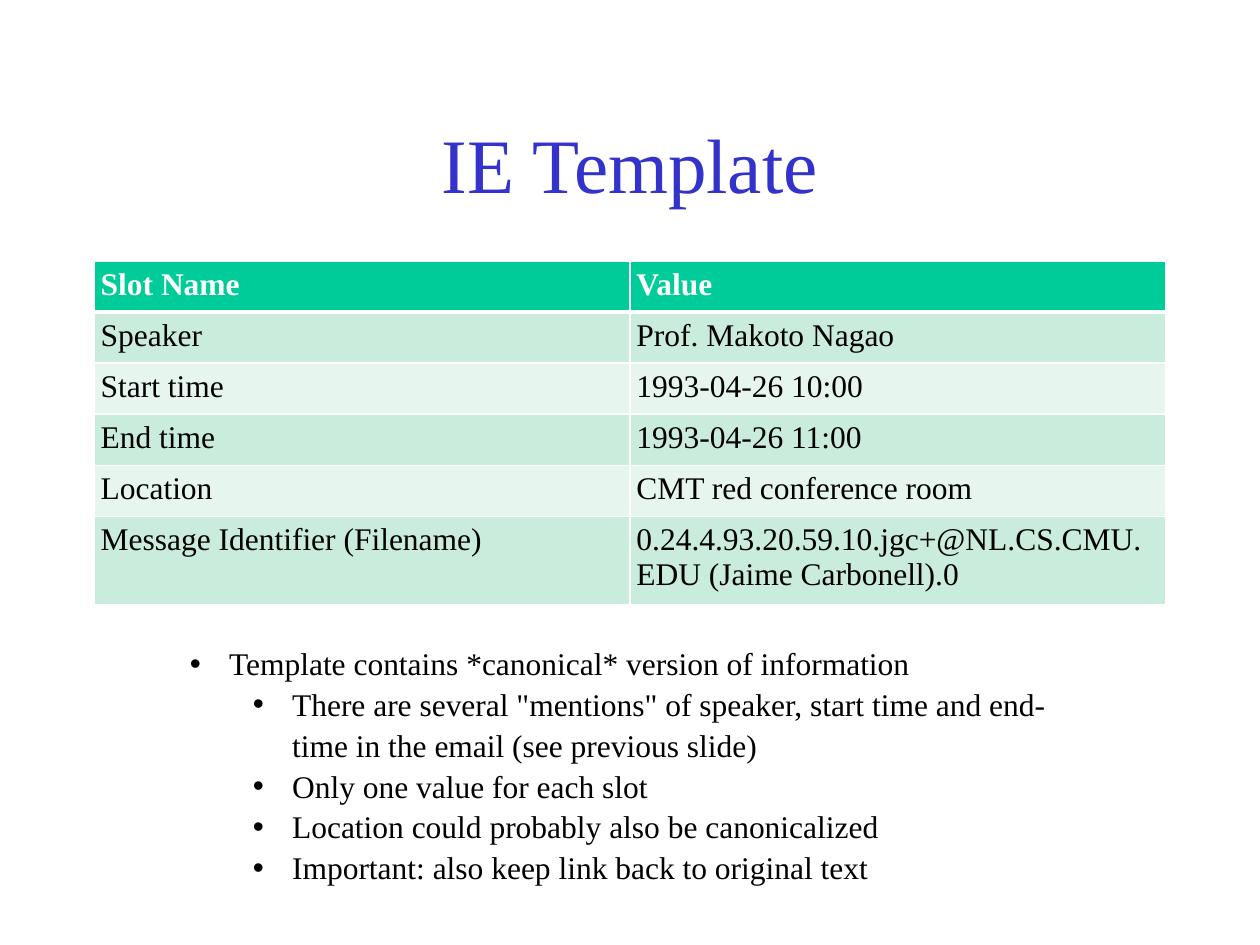
from lxml.etree import SubElement as Sub
from pptx import Presentation
from pptx.dml.color import RGBColor as RGB
from pptx.enum.text import MSO_ANCHOR as Anchor, PP_ALIGN as Align
from pptx.oxml.ns import qn
from pptx.util import Cm, Pt

BLUE = RGB(0x33, 0x33, 0xCC)
GREEN = RGB(0x00, 0xCC, 0x99)
MINT = RGB(0xCA, 0xEC, 0xDD)
PALE = RGB(0xE6, 0xF6, 0xEF)
WHITE = RGB(0xFF, 0xFF, 0xFF)
BLACK = RGB(0, 0, 0)

SLOTS = [
    ("Slot Name", "Value"),
    ("Speaker", "Prof. Makoto Nagao"),
    ("Start time", "1993-04-26 10:00"),
    ("End time", "1993-04-26 11:00"),
    ("Location", "CMT red conference room"),
    ("Message Identifier (Filename)",
     "0.24.4.93.20.59.10.jgc+@NL.CS.CMU.EDU (Jaime Carbonell).0"),
]
NOTES = [
    (0, "Template contains *canonical* version of information"),
    (1, 'There are several "mentions" of speaker, start time and end-time '
        "in the email (see previous slide)"),
    (1, "Only one value for each slot"),
    (1, "Location could probably also be canonicalized"),
    (1, "Important: also keep link back to original text"),
]


def write(para, text, size=18, color=BLACK, bold=False, align=Align.LEFT,
          font="Times New Roman"):
    para.alignment = align
    run = para.add_run()
    run.text = text
    run.font.name, run.font.size = font, Pt(size)
    run.font.bold, run.font.color.rgb = bold, color


def pad(item):
    item.margin_left = item.margin_right = Cm(0.13)
    item.margin_top = item.margin_bottom = Cm(0.13)


def bullet(para, level):
    para.level = level
    props = para._p.get_or_add_pPr()
    props.set("marL", str(Cm(0.79 + 1.27 * level)))
    props.set("indent", str(Cm(-0.79)))
    Sub(props, qn("a:buFont"), typeface="Arial")
    Sub(props, qn("a:buChar"), char="•")


def edge(cell, side, width):
    line = Sub(cell._tc.get_or_add_tcPr(), qn(f"a:ln{side}"), w=str(Pt(width)))
    Sub(Sub(line, qn("a:solidFill")), qn("a:srgbClr"), val=str(WHITE))


class Page:
    def __init__(self, slide):
        self.slide = slide

    def box(self, left, top, width, height, anchor=Anchor.TOP):
        area = self.slide.shapes.add_textbox(
            Cm(left), Cm(top), Cm(width), Cm(height))
        frame = area.text_frame
        frame.word_wrap, frame.vertical_anchor = True, anchor
        pad(frame)
        return frame

    def title(self, text, *place):
        frame = self.box(*place, anchor=Anchor.MIDDLE)
        write(frame.paragraphs[0], text, size=44, color=BLUE,
              align=Align.CENTER)

    def table(self, rows, left, top, width, height):
        grid = self.slide.shapes.add_table(
            len(rows), len(rows[0]), Cm(left), Cm(top),
            Cm(width), Cm(height)).table
        for i, row in enumerate(rows):
            head = i == 0
            for j, text in enumerate(row):
                cell = grid.cell(i, j)
                pad(cell)
                write(cell.text_frame.paragraphs[0], text, bold=head,
                      color=WHITE if head else BLACK)
                # Borders come before the fill in the cell properties
                for side in "LRTB":
                    thick = (i, side) in ((0, "B"), (1, "T"))
                    edge(cell, side, 3 if thick else 1)
                cell.fill.solid()
                cell.fill.fore_color.rgb = (
                    GREEN if head else MINT if i % 2 else PALE)

    def bullets(self, items, *place):
        frame = self.box(*place)
        for i, (level, text) in enumerate(items):
            para = frame.add_paragraph() if i else frame.paragraphs[0]
            para.line_spacing = 1.08
            bullet(para, level)
            write(para, text)


def main():
    deck = Presentation()
    deck.slide_width, deck.slide_height = Cm(25.4), Cm(19.05)
    page = Page(deck.slides.add_slide(deck.slide_layouts[6]))

    # Title
    page.title("IE Template", 1.9, 1.7, 21.6, 3.18)
    # Filled template
    page.table(SLOTS, 1.9, 5.26, 21.6, 6.18)
    # Remarks
    page.bullets(NOTES, 3.7, 12.8, 18.3, 4.67)

    deck.save("out.pptx")


if __name__ == "__main__":
    main()
